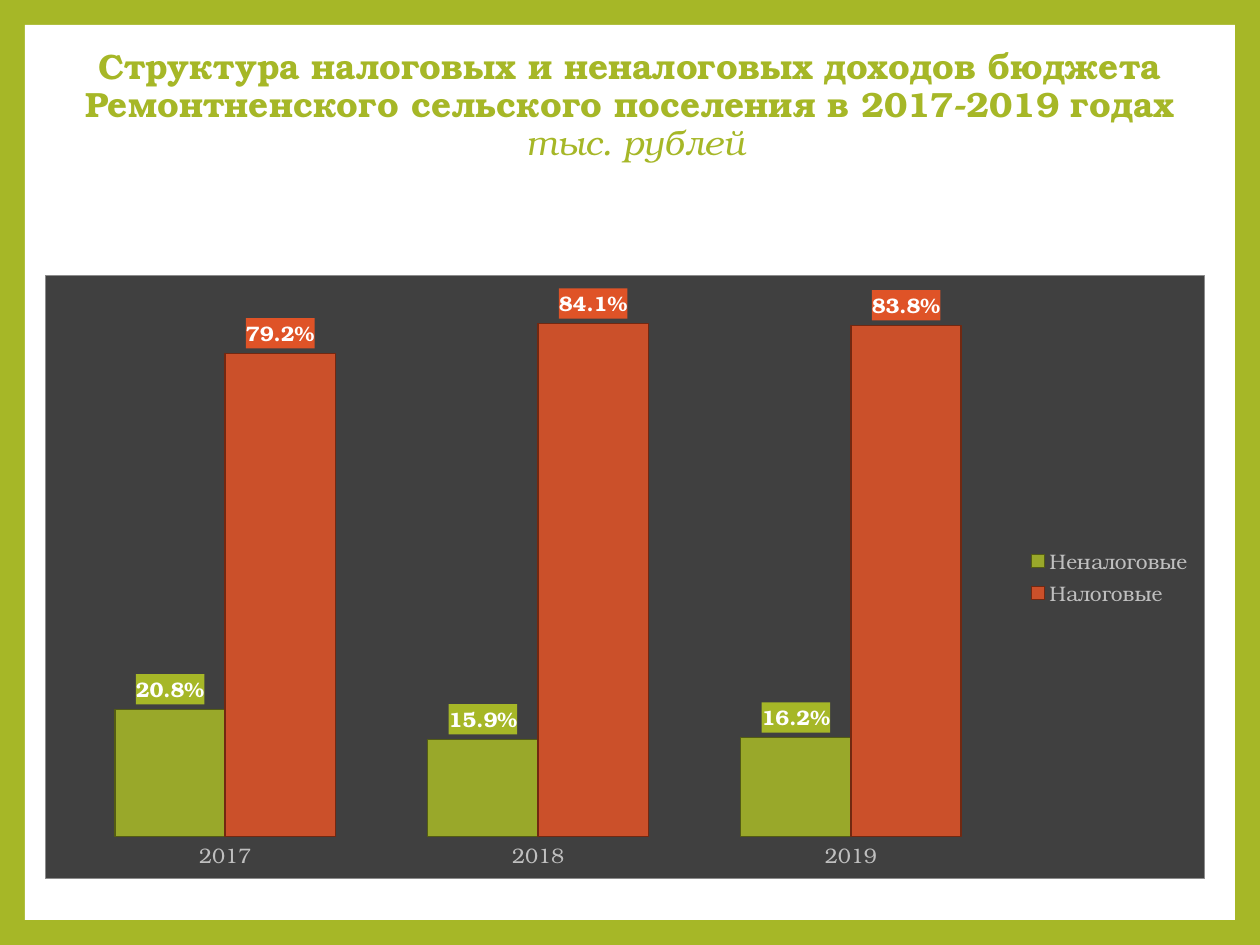
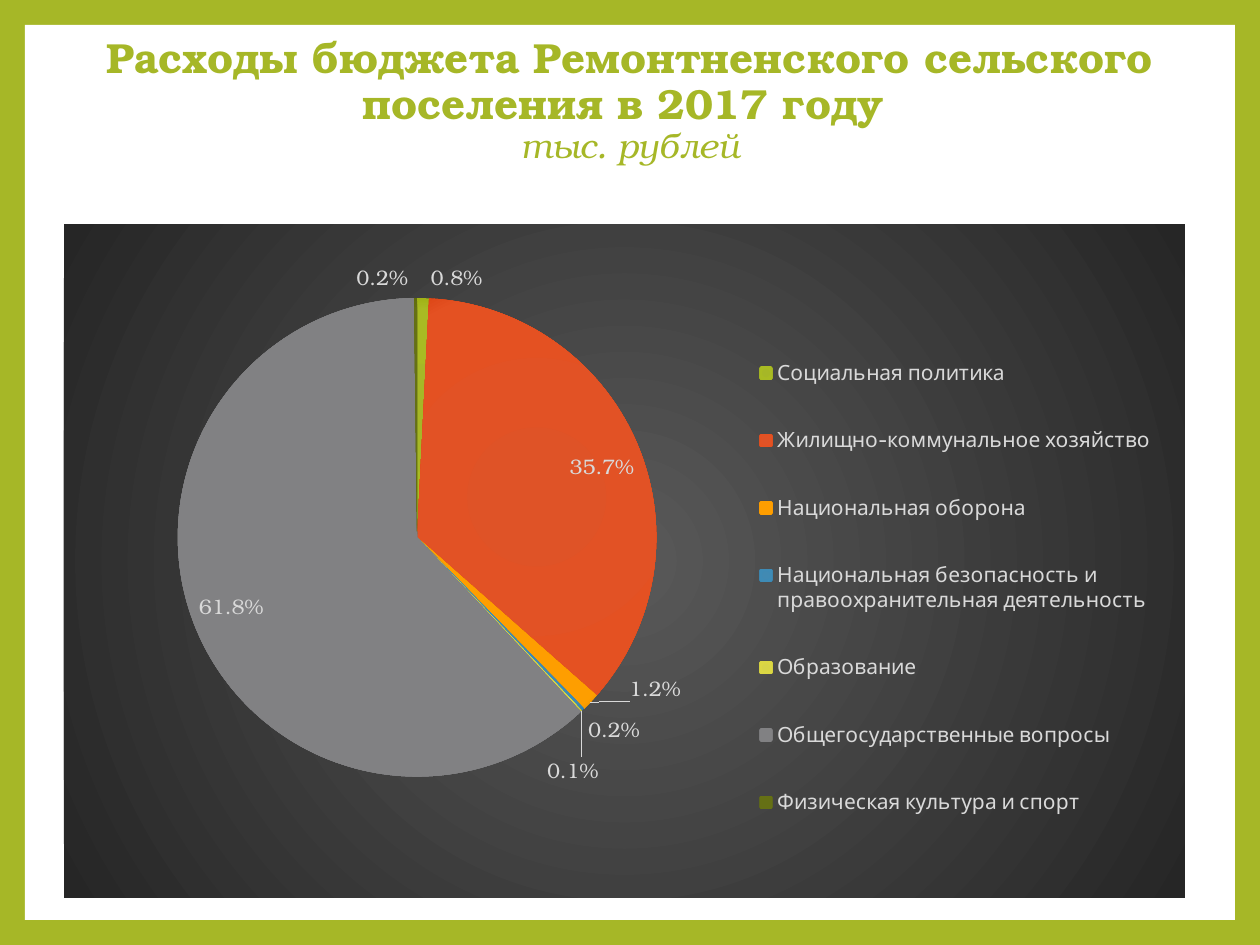
from lxml.etree import SubElement
from pptx import Presentation
from pptx.chart.data import CategoryChartData
from pptx.dml.color import RGBColor
from pptx.enum.chart import (XL_CHART_TYPE, XL_LABEL_POSITION,
                             XL_LEGEND_POSITION, XL_TICK_MARK)
from pptx.enum.shapes import MSO_SHAPE
from pptx.enum.text import MSO_ANCHOR, PP_ALIGN
from pptx.oxml import parse_xml
from pptx.oxml.ns import nsdecls, qn
from pptx.util import Pt

SCALE = 914400 / 126
WIDE, HIGH, RIM = 1260, 945, 25

LIME = RGBColor(0xA6, 0xB7, 0x27)
MOSS = RGBColor(0x53, 0x5C, 0x14)
RED = RGBColor(0xDF, 0x53, 0x27)
RUST = RGBColor(0x72, 0x28, 0x11)
WHITE = RGBColor(0xFF, 0xFF, 0xFF)
BLACK = RGBColor(0x00, 0x00, 0x00)
COAL = RGBColor(0x26, 0x26, 0x26)
DARK = RGBColor(0x40, 0x40, 0x40)
SLATE = RGBColor(0x59, 0x59, 0x59)
GREY = RGBColor(0x8C, 0x8C, 0x8C)
SILVER = RGBColor(0xBF, 0xBF, 0xBF)
PALE = RGBColor(0xD9, 0xD9, 0xD9)

# Slice tints run from the centre to the rim
GREENS = LIME, RGBColor(0xA9, 0xBB, 0x23), RGBColor(0xA1, 0xB3, 0x16)
REDS = RED, RGBColor(0xE4, 0x51, 0x22), RGBColor(0xDB, 0x43, 0x13)
GOLDS = (RGBColor(0xFE, 0x9E, 0x00), RGBColor(0xFE, 0x9E, 0x00),
         RGBColor(0xE7, 0x8F, 0x00))
BLUES = (RGBColor(0x41, 0x8A, 0xB3), RGBColor(0x3E, 0x8B, 0xB6),
         RGBColor(0x31, 0x80, 0xAD))
LEMONS = (RGBColor(0xD7, 0xD4, 0x47), RGBColor(0xDB, 0xD7, 0x43),
          RGBColor(0xD0, 0xCD, 0x33))
GREYS = (RGBColor(0x81, 0x81, 0x83), RGBColor(0x81, 0x81, 0x83),
         RGBColor(0x75, 0x75, 0x77))
OLIVES = (RGBColor(0x64, 0x6E, 0x17), RGBColor(0x65, 0x70, 0x15),
          RGBColor(0x60, 0x6B, 0x0D))

SERIF, SANS = "TeX Gyre Bonum", "Cabin"
SHARE = "0.0%"

YEARS = ["2017", "2018", "2019"]
INCOME = [
    ("Неналоговые", (0.208, 0.159, 0.162), LIME, MOSS),
    ("Налоговые", (0.792, 0.841, 0.838), RED, RUST),
]
COSTS = [
    ("Социальная политика", 0.008, GREENS),
    ("Жилищно-коммунальное хозяйство", 0.357, REDS),
    ("Национальная оборона", 0.012, GOLDS),
    ("Национальная безопасность и правоохранительная деятельность",
     0.002, BLUES),
    ("Образование", 0.001, LEMONS),
    ("Общегосударственные вопросы", 0.618, GREYS),
    ("Физическая культура и спорт", 0.002, OLIVES),
]


def px(*sizes):
    """Turn px into EMU."""
    return [round(size * SCALE) for size in sizes]


def style(font, size, color, face=SERIF, bold=False, italic=False):
    font.size, font.name = Pt(size), face
    font.bold, font.italic = bold, italic
    font.color.rgb = color


def write(para, text, **look):
    run = para.add_run()
    run.text = text
    style(run.font, **look)


def add_page(deck):
    """Add a slide with a white sheet inside a lime rim."""
    page = deck.slides.add_slide(deck.slide_layouts[6])
    fill = page.background.fill
    fill.solid()
    fill.fore_color.rgb = LIME
    sheet = page.shapes.add_shape(
        MSO_SHAPE.RECTANGLE,
        *px(RIM, RIM, WIDE - 2 * RIM, HIGH - 2 * RIM))
    sheet.shadow.inherit = False
    sheet.fill.solid()
    sheet.fill.fore_color.rgb = WHITE
    sheet.line.fill.background()
    return page


def add_title(page, head, unit, size, high, drop=6):
    box = page.shapes.add_textbox(*px(0, 0, WIDE, high))
    frame = box.text_frame
    frame.word_wrap = True
    frame.vertical_anchor = MSO_ANCHOR.MIDDLE
    frame.margin_top = px(drop)[0]
    para = frame.paragraphs[0]
    para.alignment = PP_ALIGN.CENTER
    para.line_spacing = 0.9
    write(para, head, size=size, color=LIME, bold=True)
    para.add_line_break()
    write(para, unit, size=20, color=LIME, italic=True)


def solid(color):
    return f'<a:solidFill><a:srgbClr val="{color}"/></a:solidFill>'


def radial(stops, focus):
    """Circular gradient; focus is its inner edge in percent."""
    marks = "".join(f'<a:gs pos="{at * 1000}"><a:srgbClr val="{color}"/></a:gs>'
                    for at, color in stops)
    edges = " ".join(f'{side}="{focus * 1000}"' for side in "ltrb")
    return (f'<a:gradFill><a:gsLst>{marks}</a:gsLst><a:path path="circle">'
            f'<a:fillToRect {edges}/></a:path></a:gradFill>')


def paint(fill, line="<a:noFill/>", width=0.5):
    """Make the shape properties of a chart part."""
    return parse_xml(f'<c:spPr {nsdecls("c", "a")}>{fill}'
                     f'<a:ln w="{Pt(width)}">{line}</a:ln></c:spPr>')


def place(owner, left, top, wide, high, inner=False):
    """Set a manual layout, in fractions of the chart."""
    for old in owner.findall(qn("c:layout")):
        owner.remove(old)
    parts = [("layoutTarget", "inner")] if inner else []
    parts += [("xMode", "edge"), ("yMode", "edge"), ("x", left),
              ("y", top), ("w", wide), ("h", high)]
    body = "".join(f'<c:{tag} val="{val}"/>' for tag, val in parts)
    node = parse_xml(f'<c:layout {nsdecls("c")}><c:manualLayout>{body}'
                     '</c:manualLayout></c:layout>')
    if inner:
        owner.insert(0, node)
    else:
        owner.find(qn("c:legendPos")).addnext(node)


def add_chart(page, kind, area, cats, rows, skin, plot, legend, tint):
    data = CategoryChartData(number_format=SHARE)
    data.categories = cats
    for name, vals in rows:
        data.add_series(name, vals)
    chart = page.shapes.add_chart(kind, *px(*area), data).chart
    style(chart.font, 10, BLACK, SANS)
    chart.has_title = False
    chart.has_legend = True
    chart.legend.position = legend
    chart.legend.include_in_layout = False
    root = chart._chartSpace
    root.find(qn("c:chart")).addnext(skin)
    place(root.find(".//" + qn("c:plotArea")), *plot, inner=True)
    style(chart.legend.font, 12, *tint)
    return chart


def label(row, spot, **look):
    tags = row.data_labels
    tags.show_value = True
    tags.number_format = SHARE
    tags.number_format_is_linked = False
    tags.position = spot
    style(tags.font, 12, **look)
    return tags._element


def add_columns(page):
    chart = add_chart(
        page, XL_CHART_TYPE.COLUMN_CLUSTERED, (45, 275, 1160, 604), YEARS,
        [row[:2] for row in INCOME], paint(solid(DARK), solid(GREY)),
        (0.02, 0.02, 0.81, 0.91), XL_LEGEND_POSITION.RIGHT, (SILVER, SERIF))
    bars = chart.plots[0]
    bars.gap_width, bars.overlap = 84, 0
    bars.vary_by_categories = False
    axis = chart.value_axis
    axis.visible = axis.has_major_gridlines = False
    axis.minimum_scale, axis.maximum_scale = 0, 0.9
    years = chart.category_axis
    years.major_tick_mark = XL_TICK_MARK.NONE
    years.format.line.fill.background()
    style(years.tick_labels.font, 12, SILVER)
    for row, (_, _, color, edge) in zip(bars.series, INCOME):
        look = row.format
        look.fill.solid()
        look.fill.fore_color.rgb = color
        tone = row._element.find(".//" + qn("a:srgbClr"))
        SubElement(tone, qn("a:alpha")).set("val", "88000")
        look.line.width = Pt(0.75)
        look.line.color.rgb = edge
        tags = label(row, XL_LABEL_POSITION.OUTSIDE_END,
                     color=WHITE, bold=True)
        tags.find(qn("c:numFmt")).addnext(paint(solid(color)))


def add_pie(page):
    names, vals, tints = zip(*COSTS)
    chart = add_chart(
        page, XL_CHART_TYPE.PIE, (64, 224, 1121, 674), names,
        [("Series 1", vals)],
        paint(radial([(0, SLATE), (100, COAL)], 50)),
        (0.05, 0.11, 0.53, 0.71), XL_LEGEND_POSITION.BOTTOM, (PALE, SANS))
    place(chart.legend._element, 0.61, 0.14, 0.37, 0.8)
    pie = chart.plots[0]
    pie.vary_by_categories = True
    row = pie.series[0]
    for spot, tint in enumerate(tints):
        row.points[spot].format.fill.solid()
        slot = row._element.findall(qn("c:dPt"))[spot]
        slot.replace(slot.find(qn("c:spPr")),
                     paint(radial(zip((0, 90, 100), tint), 100)))
    tags = label(row, XL_LABEL_POSITION.BEST_FIT, color=PALE)
    lead = SubElement(tags, qn("c:leaderLines"))
    lead.append(paint("", solid(PALE), 0.75))


def main():
    deck = Presentation()
    deck.slide_width, deck.slide_height = px(WIDE, HIGH)

    page = add_page(deck)
    add_title(page, "Структура налоговых и неналоговых доходов бюджета "
              "Ремонтненского сельского поселения в 2017-2019 годах",
              " тыс. рублей", size=20, high=175, drop=44)
    add_columns(page)

    page = add_page(deck)
    add_title(page, "Расходы бюджета Ремонтненского сельского "
              "поселения в 2017 году ", "тыс. рублей", size=24, high=204)
    add_pie(page)

    deck.save("out.pptx")


if __name__ == "__main__":
    main()
